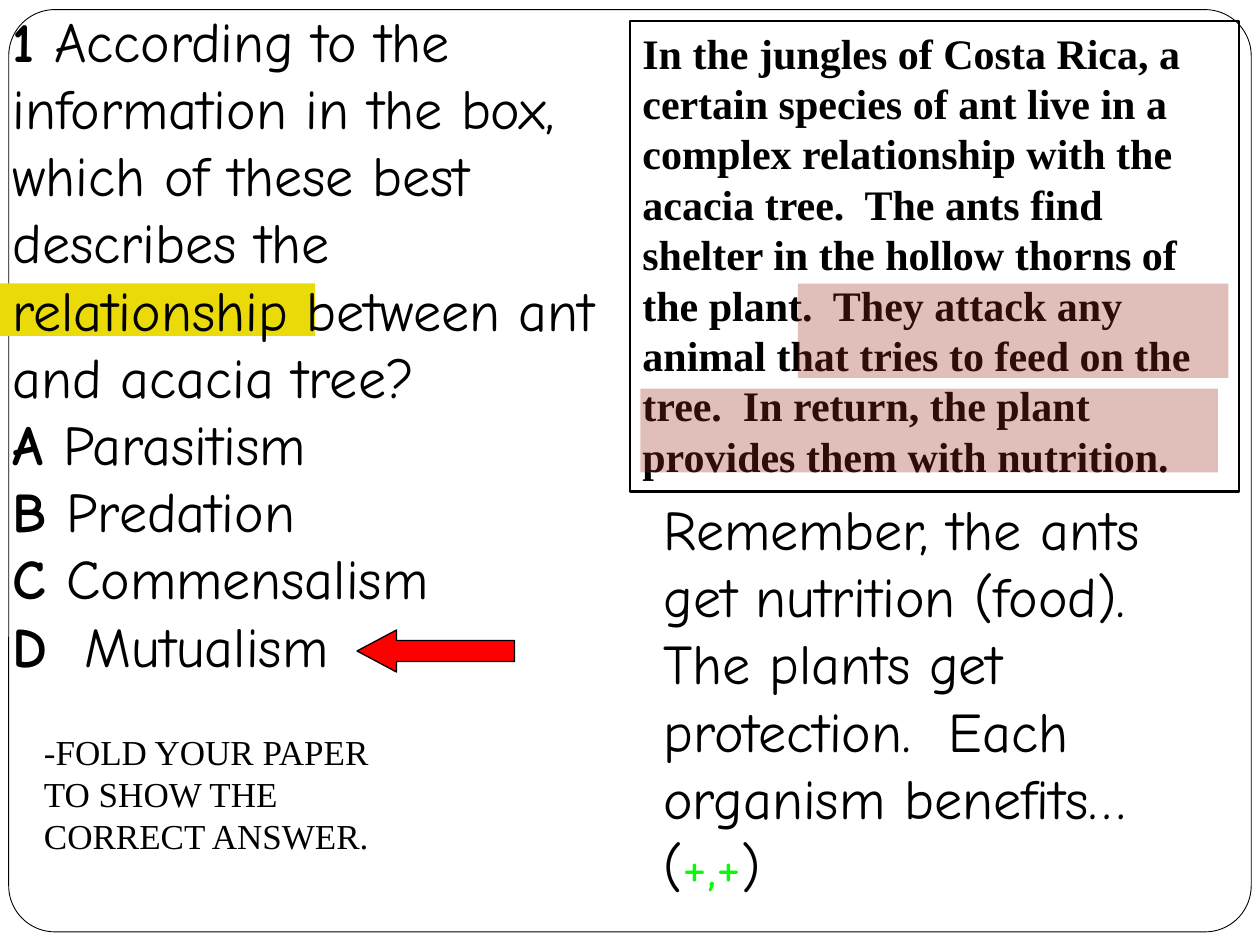
import pptx
import pptx.util
import pptx.dml.color
import pptx.enum.shapes
import pptx.enum.text
import pptx.oxml.ns
import lxml.etree

Pt = pptx.util.Pt
SHAPE = pptx.enum.shapes.MSO_SHAPE
COLORS = {
    "paper": "FFFFFF",
    "ink": "000000",
    "highlight": "EADA08",
    "arrow": "FF0000",
    "benefit": "00FF00",
    "evidence": "9B2D1F",
}
HAND = "Comic Neue"
SERIF = "Times New Roman"


def rgb(name):
    return pptx.dml.color.RGBColor.from_string(COLORS[name])


def add_panel(slide, kind, box, fill=None, line_width=None, alpha=None):
    """Add a preset shape; box is left, top, width, height in points."""
    panel = slide.shapes.add_shape(kind, *map(Pt, box))
    panel.shadow.inherit = False
    if fill:
        panel.fill.solid()
        panel.fill.fore_color.rgb = rgb(fill)
    else:
        panel.fill.background()
    if line_width:
        panel.line.color.rgb = rgb("ink")
        panel.line.width = Pt(line_width)
    else:
        panel.line.fill.background()
    if alpha:
        qn = pptx.oxml.ns.qn
        color = panel.element.spPr.find(qn("a:solidFill")).find(qn("a:srgbClr"))
        lxml.etree.SubElement(color, qn("a:alpha")).set("val", str(alpha * 1000))
    return panel


def write_text(shape, paragraphs, font, size):
    """Fill a shape with paragraphs, each a list of (text, bold, color) runs."""
    frame = shape.text_frame
    frame.word_wrap = True
    frame.vertical_anchor = pptx.enum.text.MSO_ANCHOR.TOP
    for number, runs in enumerate(paragraphs):
        paragraph = frame.add_paragraph() if number else frame.paragraphs[0]
        paragraph.alignment = pptx.enum.text.PP_ALIGN.LEFT
        for text, bold, color in runs:
            run = paragraph.add_run()
            run.text = text
            run.font.name = font
            run.font.size = Pt(size)
            run.font.bold = bold
            run.font.color.rgb = rgb(color)


def add_text(slide, box, paragraphs, font, size):
    write_text(slide.shapes.add_textbox(*map(Pt, box)), paragraphs, font, size)


def add_question(slide):
    add_panel(slide, SHAPE.RECTANGLE, (0, 162, 180, 30), "highlight")
    lines = [
        ("1 ", "According to the information in the box, which of these best "
               "describes the relationship between ant and acacia tree?"),
        ("A ", "Parasitism"),
        ("B ", "Predation"),
        ("C ", "Commensalism"),
        ("D", "  Mutualism"),
    ]
    paragraphs = [[(label, True, "ink"), (text, False, "ink")] for label, text in lines]
    add_text(slide, (0, 0, 348, 395), paragraphs, HAND, 32)
    answer_arrow = add_panel(slide, SHAPE.LEFT_ARROW, (204, 360, 90, 24), "arrow", 0.75)
    answer_arrow.adjustments[1] = 0.94


def add_explanation(slide):
    reminder = [
        ("Remember, the ants get nutrition (food).  The plants get protection.  "
         "Each organism benefits… (", False, "ink"),
        ("+,+", False, "benefit"),
        (")", False, "ink"),
    ]
    add_text(slide, (372, 279, 318, 240), [reminder], HAND, 32)
    instruction = [("-FOLD YOUR PAPER TO SHOW THE CORRECT ANSWER.", False, "ink")]
    add_text(slide, (18, 414, 228, 80), [instruction], SERIF, 20)


def add_passage(slide):
    passage = add_panel(slide, SHAPE.RECTANGLE, (360, 12, 348, 269), line_width=1.5)
    story = ("In the jungles of Costa Rica, a certain species of ant live in a complex "
             "relationship with the acacia tree.  The ants find shelter in the hollow "
             "thorns of the plant.  They attack any animal that tries to feed on the "
             "tree.  In return, the plant provides them with nutrition.")
    write_text(passage, [[(story, True, "ink")]], SERIF, 24)
    for box in ((456, 162, 246, 54), (366, 222, 330, 48)):
        add_panel(slide, SHAPE.RECTANGLE, box, "evidence", alpha=30)


def main():
    deck = pptx.Presentation()
    deck.slide_width, deck.slide_height = Pt(720), Pt(540)
    slide = deck.slides.add_slide(deck.slide_layouts[6])
    border = add_panel(slide, SHAPE.ROUNDED_RECTANGLE, (5, 5.5, 710, 527), "paper", 0.5)
    border.adjustments[0] = 0.05
    add_question(slide)
    add_explanation(slide)
    add_passage(slide)
    deck.save("out.pptx")


if __name__ == "__main__":
    main()
